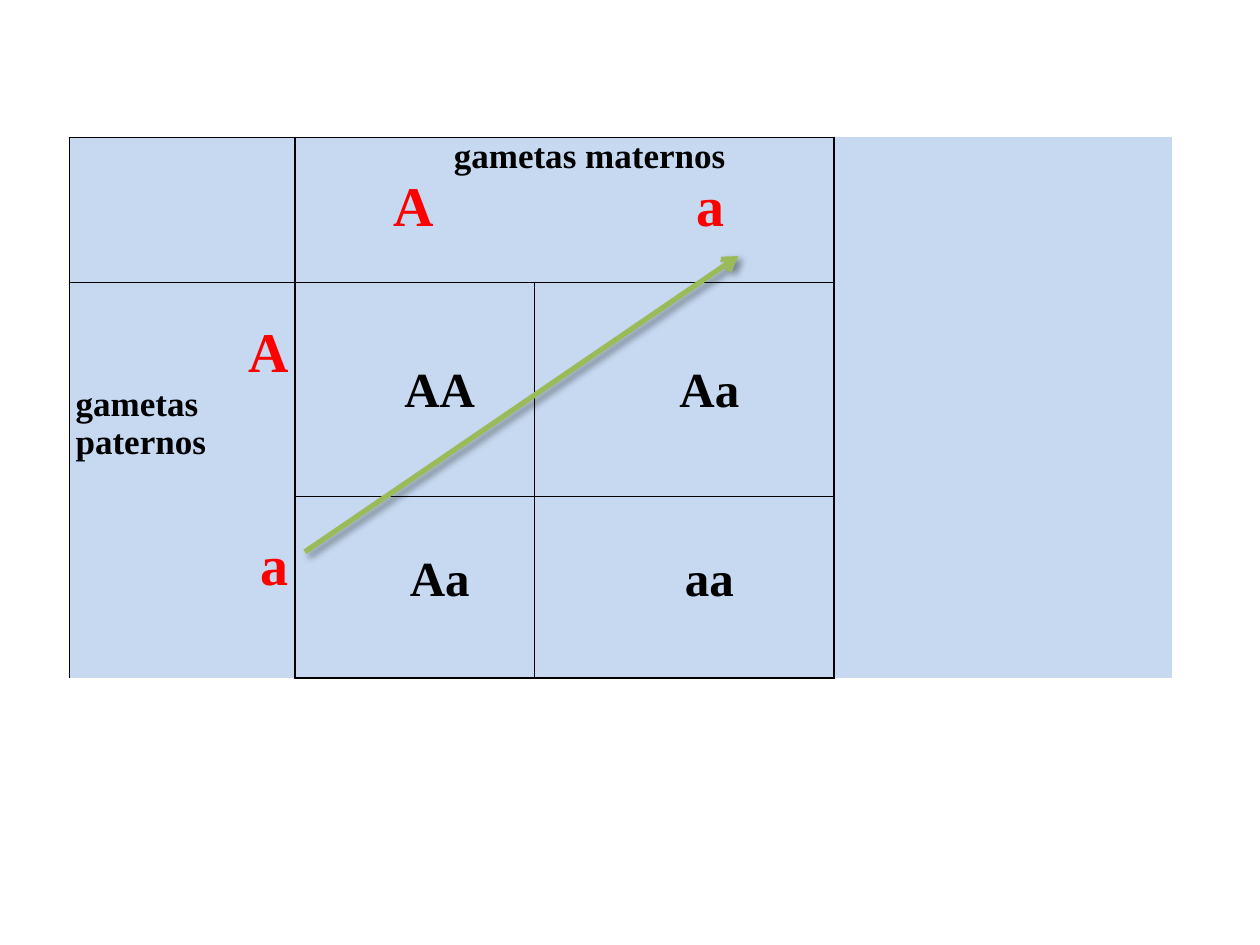
import pptx
import pptx.dml.color
import pptx.enum.shapes
import pptx.enum.text
import pptx.oxml
import pptx.oxml.ns
import pptx.util

Inches, Pt = pptx.util.Inches, pptx.util.Pt
RGB = pptx.dml.color.RGBColor.from_string
ALIGN = pptx.enum.text.PP_ALIGN
NS = pptx.oxml.ns.nsdecls("a")

THEME = {
    "font": "Times New Roman",
    "cell": "C6D9F1", "ink": "000000", "allele": "FF0000", "arrow": "9BBB59",
    "label_size": 20, "genotype_size": 28, "allele_size": 32,
    "frame": 1, "inner": 0.5, "arrow_width": 3,
}
COLUMNS = [1.79, 1.9, 2.38, 2.68]
ROWS = [1.15, 1.7, 1.44]
INDENT = 0.45
SIDE = 0.05


def write(cell, paragraphs, top=0, left=SIDE):
    """Fill a cell with (text, role, alignment, space before in points) rows."""
    margins = {"margin_left": left, "margin_right": SIDE, "margin_top": top, "margin_bottom": 0}
    for side, inches in margins.items():
        setattr(cell, side, Inches(inches))
    for index, (text, role, alignment, before) in enumerate(paragraphs):
        frame = cell.text_frame
        paragraph = frame.add_paragraph() if index else frame.paragraphs[0]
        paragraph.alignment = alignment
        if before:
            paragraph.space_before = Pt(before)
        run = paragraph.add_run()
        run.text = text
        look = {"name": THEME["font"], "size": Pt(THEME[role + "_size"]), "bold": True}
        for attribute, value in look.items():
            setattr(run.font, attribute, value)
        run.font.color.rgb = RGB(THEME["allele" if role == "allele" else "ink"])


deck = pptx.Presentation()
deck.slide_width, deck.slide_height = Inches(10), Inches(7.5)
slide = deck.slides.add_slide(deck.slide_layouts[6])

punnett = slide.shapes.add_table(
    len(ROWS), len(COLUMNS), Inches(0.55), Inches(1.09), Inches(sum(COLUMNS)), Inches(sum(ROWS))
).table
for column, width in zip(punnett.columns, COLUMNS):
    column.width = Inches(width)
for row, height in zip(punnett.rows, ROWS):
    row.height = Inches(height)

# Blocks of the square: first row, first column, last row, last column
blocks = [(0, 0, 0, 0), (0, 1, 0, 2), (0, 3, 2, 3), (1, 0, 2, 0)]
blocks += [(r, c, r, c) for r in (1, 2) for c in (1, 2)]
for top, left, bottom, right in blocks:
    if (top, left) != (bottom, right):
        punnett.cell(top, left).merge(punnett.cell(bottom, right))
    for r in range(top, bottom + 1):
        for c in range(left, right + 1):
            cell = punnett.cell(r, c)
            genotype = r > 0 and c in (1, 2)
            inner = {"L": c == 2, "R": c == 1, "T": r == 2, "B": r == 1}
            on_edge = {"L": c == left, "R": c == right, "T": r == top, "B": r == bottom}
            for side, present in on_edge.items():
                drawn = present and (c < 3 or side == "L")
                points = THEME["inner" if genotype and inner[side] else "frame"]
                paint = (
                    f'<a:solidFill><a:srgbClr val="{THEME["ink"]}"/></a:solidFill>'
                    if drawn else "<a:noFill/>"
                )
                cell._tc.get_or_add_tcPr().append(pptx.oxml.parse_xml(
                    f'<a:ln{side} {NS} w="{Pt(points)}">{paint}</a:ln{side}>'))
            cell.fill.solid()
            cell.fill.fore_color.rgb = RGB(THEME["cell"])

maternal = punnett.cell(0, 1)
write(maternal, [
    ("gametas maternos", "label", ALIGN.CENTER, 0),
    ("\tA\ta", "allele", ALIGN.LEFT, 0),
], left=INDENT)
stops = "".join(f'<a:tab pos="{Inches(stop)}" algn="l"/>' for stop in (0.33, 2.74))
maternal.text_frame.paragraphs[1]._p.get_or_add_pPr().append(
    pptx.oxml.parse_xml(f"<a:tabLst {NS}>{stops}</a:tabLst>"))

write(punnett.cell(1, 0), [
    ("A", "allele", ALIGN.RIGHT, 0),
    ("gametas paternos", "label", ALIGN.LEFT, 0),
    ("a", "allele", ALIGN.RIGHT, 42),
], top=0.32)

for r, top, genotypes in [(1, 0.65, ("AA", "Aa")), (2, 0.45, ("Aa", "aa"))]:
    for c, genotype in enumerate(genotypes, start=1):
        write(punnett.cell(r, c), [(genotype, "genotype", ALIGN.CENTER, 0)], top, INDENT)

width, height = deck.slide_width, deck.slide_height
diagonal = slide.shapes.add_connector(
    pptx.enum.shapes.MSO_CONNECTOR.STRAIGHT,
    int(width * 0.242), int(height * 0.584), int(width * 0.586), int(height * 0.271),
)
diagonal.line.color.rgb = RGB(THEME["arrow"])
diagonal.line.width = Pt(THEME["arrow_width"])
diagonal.line._get_or_add_ln().append(pptx.oxml.parse_xml(f'<a:tailEnd {NS} type="arrow"/>'))
diagonal._element.spPr.append(pptx.oxml.parse_xml(
    f'<a:effectLst {NS}><a:outerShdw blurRad="{Pt(4)}" dist="{Pt(3)}" dir="{45 * 60000}">'
    f'<a:srgbClr val="{THEME["ink"]}"><a:alpha val="40000"/></a:srgbClr>'
    "</a:outerShdw></a:effectLst>"))

deck.save("out.pptx")
